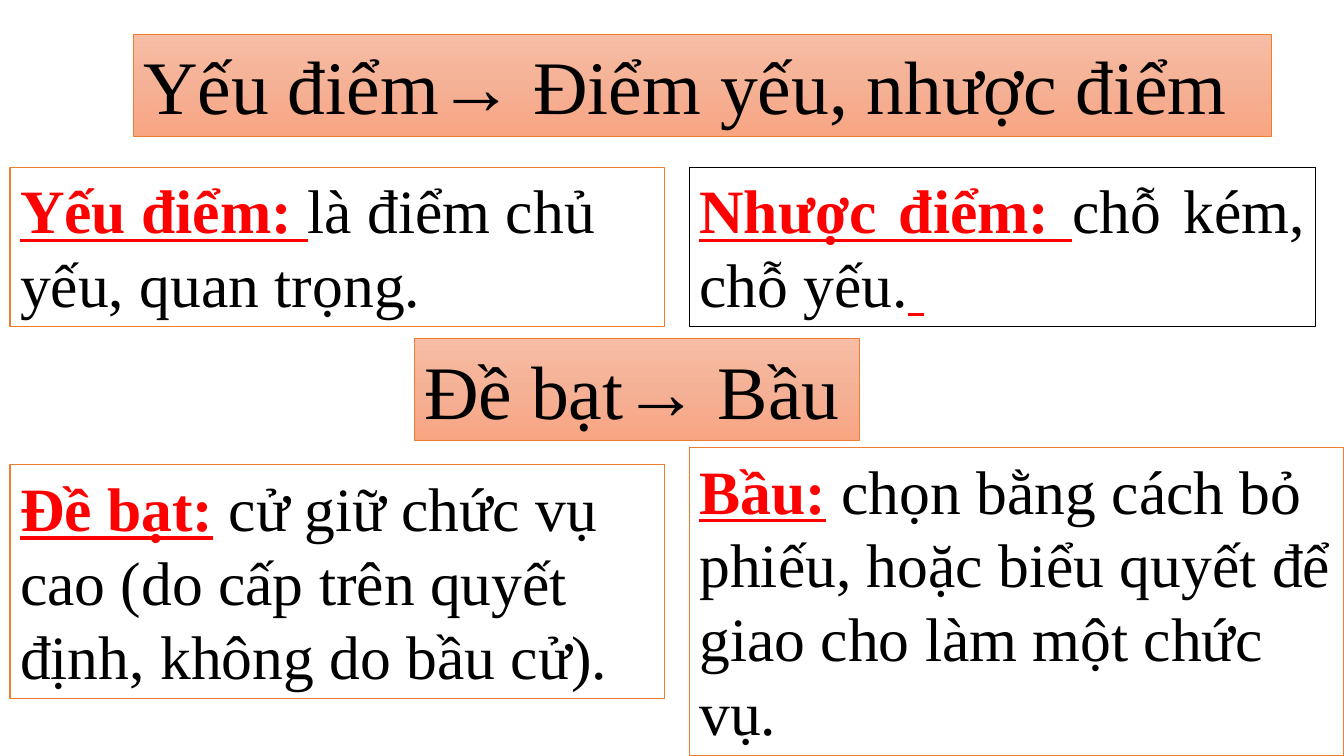
from copy import deepcopy
from dataclasses import dataclass

from pptx import Presentation
from pptx.dml.color import RGBColor
from pptx.enum.shapes import MSO_SHAPE
from pptx.enum.text import MSO_ANCHOR, MSO_AUTO_SIZE, PP_ALIGN
from pptx.oxml.ns import qn
from pptx.util import Pt

RECT = MSO_SHAPE.RECTANGLE
TOP = MSO_ANCHOR.TOP
NO_FIT = MSO_AUTO_SIZE.NONE
LEFT, JUSTIFY = PP_ALIGN.LEFT, PP_ALIGN.JUSTIFY

FONT = "Times New Roman"
BLACK, WHITE, RED, ORANGE = "000000", "FFFFFF", "FF0000", "ED7D31"
PEACH = ("F7BDA5", "F5B196", "F8A582")
LEFT_X, RIGHT_X, WIDE = 7.2, 492.48, 467.28


@dataclass
class Run:
    text: str
    term: bool = False


@dataclass
class Box:
    x: float
    y: float
    w: float
    h: float
    runs: list[Run]
    line: str = ORANGE
    align: PP_ALIGN = LEFT


TITLE = Box(95.04, 24.48, 812.88, 72.72, [Run("Yếu điểm→ Điểm yếu, nhược điểm")])
SUBTITLE = Box(295.92, 241.92, 318.24, 72.72, [Run("Đề bạt→ Bầu")])
DEFINITIONS = [
    Box(LEFT_X, 119.52, WIDE, 113.76,
        [Run("Yếu điểm: ", True), Run("là điểm chủ yếu, quan trọng.")]),
    Box(RIGHT_X, 119.52, 447.12, 113.76,
        [Run("Nhược điểm: ", True), Run("chỗ kém, chỗ yếu."), Run(" ", True)],
        BLACK, JUSTIFY),
    Box(LEFT_X, 331.92, WIDE, 167.04,
        [Run("Đề bạt:", True),
         Run(" cử giữ chức vụ cao (do cấp trên quyết định, không do bầu cử).")]),
    Box(RIGHT_X, 319.68, WIDE, 220.32,
        [Run("Bầu:", True),
         Run(" chọn bằng cách bỏ phiếu, hoặc biểu quyết để giao cho làm một chức vụ.")]),
]


def rgb(value: str) -> RGBColor:
    return RGBColor.from_string(value)


def add_rect(slide, box: Box):
    sp = slide.shapes.add_shape(RECT, Pt(box.x), Pt(box.y), Pt(box.w), Pt(box.h))
    sp.shadow.inherit = False
    return sp


def fill_peach(sp) -> None:
    """Fill from top to bottom with three evenly spaced peach stops."""
    sp.fill.gradient()
    sp.fill.gradient_angle = 270
    stop_list = next(sp.element.iter(qn("a:gsLst")))
    stop_list.append(deepcopy(stop_list[0]))
    for i, (stop, colour) in enumerate(zip(sp.fill.gradient_stops, PEACH)):
        stop.position = i / 2
        stop.color.rgb = rgb(colour)


def write(sp, box: Box, size: float, line_width: float) -> None:
    """Outline the shape and set its text."""
    sp.line.color.rgb = rgb(box.line)
    sp.line.width = Pt(line_width)
    tf = sp.text_frame
    tf.word_wrap = True
    tf.auto_size = NO_FIT
    tf.vertical_anchor = TOP
    p = tf.paragraphs[0]
    p.alignment = box.align
    p.font.name = FONT
    p.font.size = Pt(size)
    for run in box.runs:
        r = p.add_run()
        r.text = run.text
        r.font.bold = r.font.underline = run.term
        r.font.color.rgb = rgb(RED if run.term else BLACK)


def add_heading(sp, box: Box) -> None:
    fill_peach(sp)
    write(sp, box, 54, 0.5)


def add_definition(slide, box: Box) -> None:
    sp = add_rect(slide, box)
    sp.fill.solid()
    sp.fill.fore_color.rgb = rgb(WHITE)
    write(sp, box, 44, 1)


def main() -> None:
    prs = Presentation()
    prs.slide_width, prs.slide_height = Pt(960), Pt(540)
    slide = prs.slides.add_slide(prs.slide_layouts[5])

    title = slide.shapes.title
    title.left, title.top = Pt(TITLE.x), Pt(TITLE.y)
    title.width, title.height = Pt(TITLE.w), Pt(TITLE.h)
    add_heading(title, TITLE)

    for box in DEFINITIONS[:2]:
        add_definition(slide, box)
    add_heading(add_rect(slide, SUBTITLE), SUBTITLE)
    for box in DEFINITIONS[2:]:
        add_definition(slide, box)

    prs.save("out.pptx")


if __name__ == "__main__":
    main()
